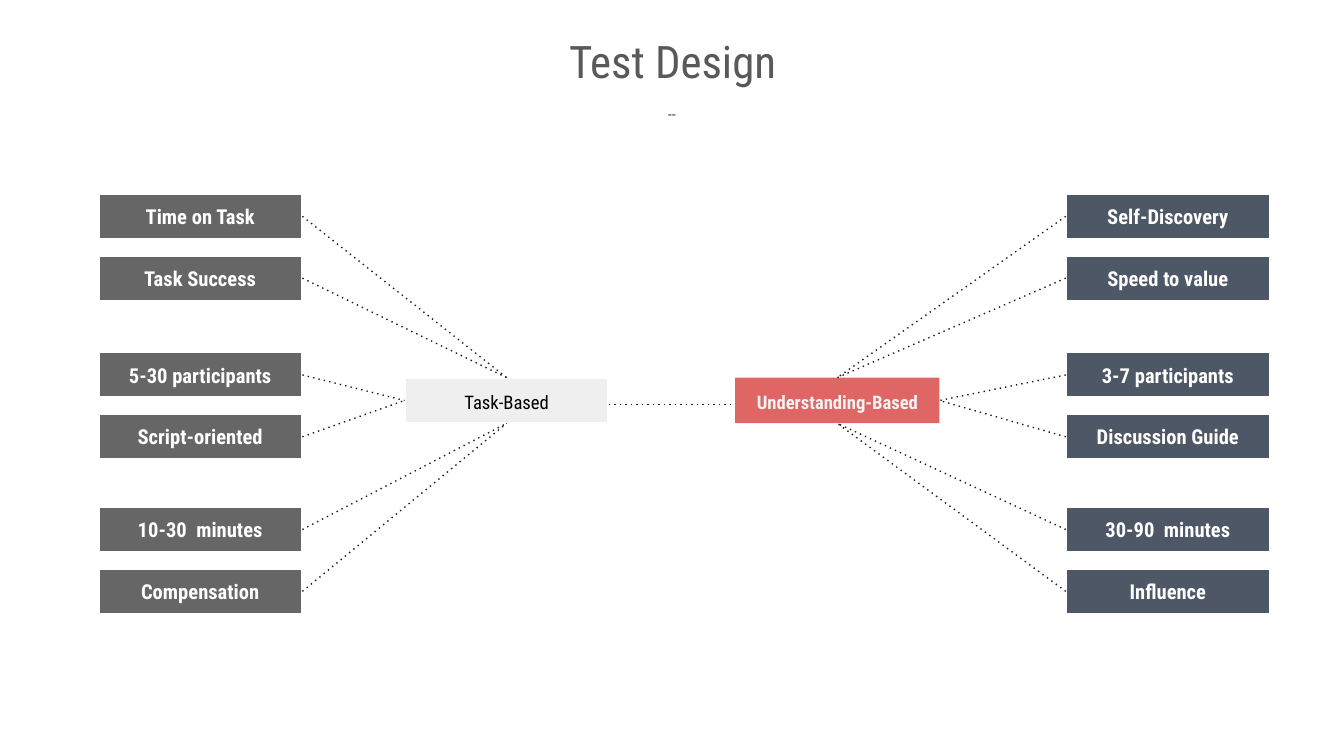
from dataclasses import dataclass

from lxml.etree import SubElement
from pptx import Presentation
from pptx.dml.color import RGBColor
from pptx.enum.shapes import MSO_CONNECTOR, MSO_SHAPE
from pptx.enum.text import MSO_ANCHOR, MSO_AUTO_SIZE, PP_ALIGN
from pptx.oxml.ns import qn
from pptx.util import Inches, Pt


@dataclass(frozen=True)
class Theme:
    font: str = "Roboto Condensed"
    heading: str = "595959"
    black: str = "000000"
    white: str = "FFFFFF"
    off_white: str = "F3F3F3"
    task_hub: str = "EFEFEF"
    task_leaf: str = "666666"
    understanding_hub: str = "E06666"
    understanding_leaf: str = "4E5765"
    dots: str = "1A1A1A"
    title_size: int = 24
    leaf_size: int = 11
    hub_size: int = 10
    subtitle_size: int = 9


THEME = Theme()

# Grid of the diagram, in inches
SLIDE_WIDTH = 10
BOX_WIDTH, BOX_HEIGHT = 1.52, 0.34
HUB_TOP = 2.81
PAIR_TOPS = (1.44, 2.62, 3.77)
PAIR_STEP = 0.46

# Connection sites of a rectangle
TOP, LEFT, BOTTOM, RIGHT = range(4)

TASK_TRAITS = ("Time on Task", "Task Success", "5-30 participants",
               "Script-oriented", "10-30  minutes", "Compensation")
UNDERSTANDING_TRAITS = ("Self-Discovery", "Speed to value", "3-7 participants",
                        "Discussion Guide", "30-90  minutes", "Influence")


def write(frame, text, size, color, bold=False, anchor=MSO_ANCHOR.TOP, insets=(0.1, 0.1)):
    frame.word_wrap = True
    frame.auto_size = MSO_AUTO_SIZE.NONE
    frame.vertical_anchor = anchor
    frame.margin_left = frame.margin_right = Inches(insets[0])
    frame.margin_top = frame.margin_bottom = Inches(insets[1])
    paragraph = frame.paragraphs[0]
    paragraph.alignment = PP_ALIGN.CENTER
    paragraph.space_before = Pt(0)
    run = paragraph.add_run()
    run.text = text
    run.font.name = THEME.font
    run.font.size = Pt(size)
    run.font.bold = bold
    run.font.color.rgb = RGBColor.from_string(color)


def fill_heading(placeholder, bounds, text, size):
    placeholder.left, placeholder.top, placeholder.width, placeholder.height = map(Inches, bounds)
    write(placeholder.text_frame, text, size, THEME.heading, insets=(0.07, 0.04))


def add_box(slide, left, top, fill, outlined=True):
    box = slide.shapes.add_shape(MSO_SHAPE.RECTANGLE, Inches(left), Inches(top),
                                 Inches(BOX_WIDTH), Inches(BOX_HEIGHT))
    box.shadow.inherit = False
    box.fill.solid()
    box.fill.fore_color.rgb = RGBColor.from_string(fill)
    if outlined:
        box.line.color.rgb = RGBColor.from_string(THEME.white)
        box.line.width = Pt(1.5)
    else:
        box.line.fill.background()
    return box


def add_dotted_line(slide, start=(0, 0), end=(0, 0)):
    link = slide.shapes.add_connector(MSO_CONNECTOR.STRAIGHT, *map(Inches, start + end))
    link.line.color.rgb = RGBColor.from_string(THEME.dots)
    link.line.width = Pt(0.75)
    properties = link._element.spPr
    SubElement(properties.find(qn("a:ln")), qn("a:prstDash"), val="dot")
    SubElement(properties, qn("a:effectLst"))
    return link


def add_branch(slide, hub, traits, left, fill, leaf_side, hub_side):
    """Three pairs of traits, tied to the top, outer side and bottom of the hub."""
    for index, trait in enumerate(traits):
        pair, row = divmod(index, 2)
        leaf = add_box(slide, left, PAIR_TOPS[pair] + row * PAIR_STEP, fill)
        write(leaf.text_frame, trait, THEME.leaf_size, THEME.white,
              bold=True, anchor=MSO_ANCHOR.MIDDLE)
        link = add_dotted_line(slide)
        link.begin_connect(leaf, leaf_side)
        link.end_connect(hub, (TOP, hub_side, BOTTOM)[pair])


def main():
    presentation = Presentation()
    presentation.slide_width = Inches(SLIDE_WIDTH)
    presentation.slide_height = Inches(SLIDE_WIDTH * 9 / 16)
    slide = presentation.slides.add_slide(presentation.slide_layouts[0])

    # Heading
    title, subtitle = slide.placeholders
    fill_heading(title, (2.83, 0.21, 4.35, 0.48), "Test Design", THEME.title_size)
    fill_heading(subtitle, (2.5, 0.73, 5, 0.23), "--", THEME.subtitle_size)

    # The two kinds of test
    task = add_box(slide, 3.01, HUB_TOP, THEME.task_hub)
    write(task.text_frame, "Task-Based", THEME.hub_size, THEME.black)
    understanding = add_box(slide, 5.47, HUB_TOP, THEME.understanding_hub, outlined=False)
    write(understanding.text_frame, "Understanding-Based", THEME.hub_size,
          THEME.off_white, bold=True)
    add_dotted_line(slide, (4.53, 3.01), (5.47, 3.01))

    # Their traits
    add_branch(slide, task, TASK_TRAITS, 0.73, THEME.task_leaf, RIGHT, LEFT)
    add_branch(slide, understanding, UNDERSTANDING_TRAITS, 7.93,
               THEME.understanding_leaf, LEFT, RIGHT)

    presentation.save("out.pptx")


if __name__ == "__main__":
    main()
